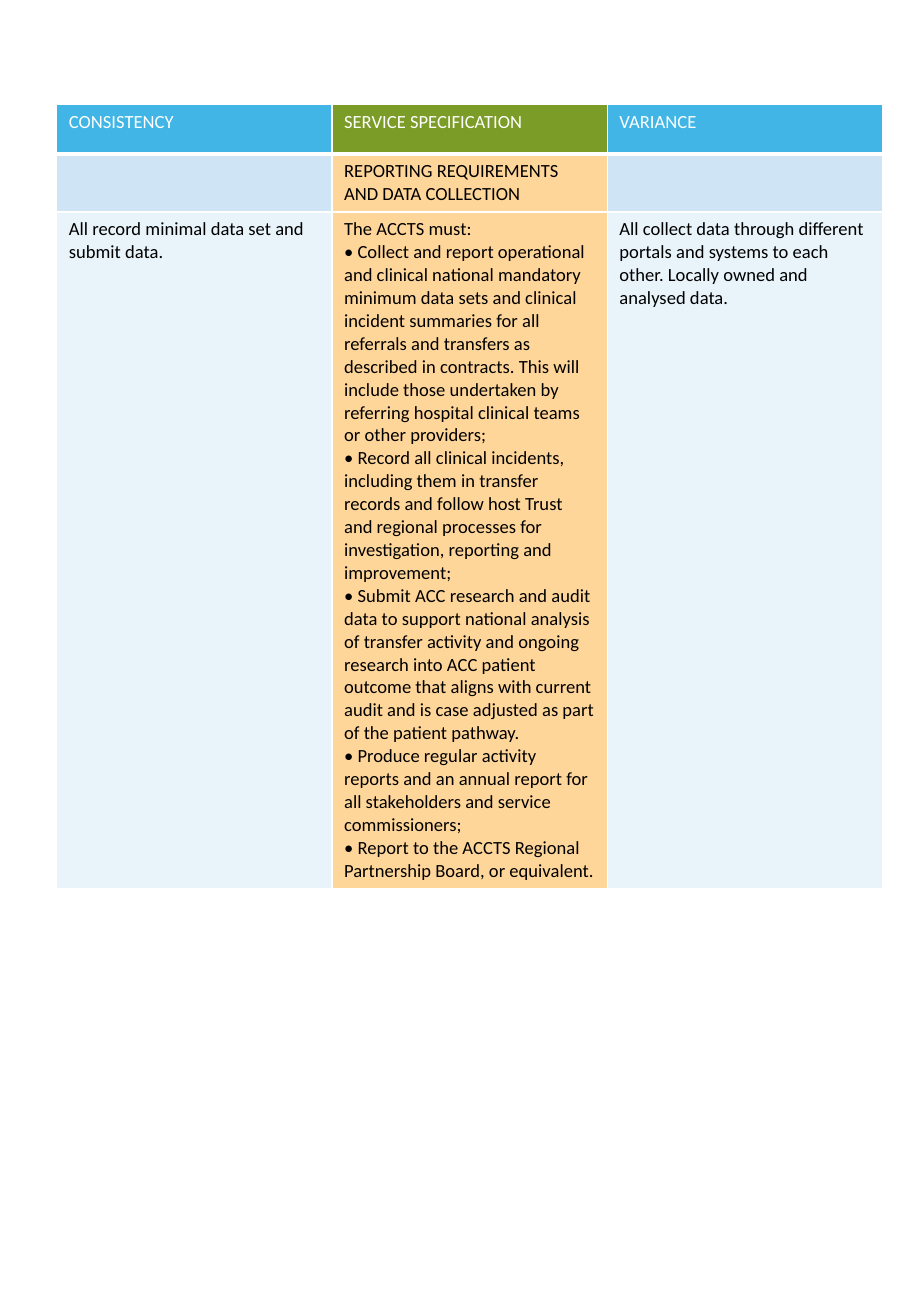
from lxml.etree import SubElement
from pptx import Presentation
from pptx.dml.color import RGBColor
from pptx.oxml.ns import qn
from pptx.util import Pt

EMU_PER_PX = 7620
WHITE, BLACK = "FFFFFF", "000000"
BLUE, GREEN, ORANGE = "41B6E6", "7B9C27", "FFD699"
MID_BLUE, PALE_BLUE = "CFE5F5", "E9F3FA"

HEADINGS = [["CONSISTENCY"], ["SERVICE SPECIFICATION"], ["VARIANCE"]]
SECTION = [[], ["REPORTING REQUIREMENTS AND DATA COLLECTION"], []]
FINDINGS = [
    ["All record minimal data set and submit data."],
    [
        "The ACCTS must:",
        "• Collect and report operational and clinical national mandatory minimum data sets and clinical incident summaries for all referrals and transfers as described in contracts. This will include those undertaken by referring hospital clinical teams or other providers;",
        "• Record all clinical incidents, including them in transfer records and follow host Trust and regional processes for investigation, reporting and improvement;",
        "• Submit ACC research and audit data to support national analysis of transfer activity and ongoing research into ACC patient outcome that aligns with current audit and is case adjusted as part of the patient pathway.",
        "• Produce regular activity reports and an annual report for all stakeholders and service commissioners;",
        "• Report to the ACCTS Regional Partnership Board, or equivalent.",
    ],
    ["All collect data through different portals and systems to each other. Locally owned and analysed data."],
]
ROWS = [
    (49, HEADINGS, (BLUE, GREEN, BLUE), WHITE),
    (57, SECTION, (MID_BLUE, ORANGE, MID_BLUE), BLACK),
    (667, FINDINGS, (PALE_BLUE, ORANGE, PALE_BLUE), BLACK),
]


def px(length):
    return length * EMU_PER_PX


def color(hex_string):
    return RGBColor.from_string(hex_string)


def fill_cell(cell, lines, fill, text_color):
    cell.fill.solid()
    cell.fill.fore_color.rgb = color(fill)
    frame = cell.text_frame
    for index, line in enumerate(lines):
        paragraph = frame.add_paragraph() if index else frame.paragraphs[0]
        run = paragraph.add_run()
        run.text = line
        run.font.name = "Calibri"
        run.font.size = Pt(11)
        run.font.bold = False
        run.font.color.rgb = color(text_color)


def border_heading(cell):
    properties = cell._tc.get_or_add_tcPr()
    for index, (side, points) in enumerate([("L", 1), ("R", 1), ("T", 1), ("B", 3)]):
        line = SubElement(properties, qn(f"a:ln{side}"), w=str(Pt(points)))
        solid = SubElement(line, qn("a:solidFill"))
        SubElement(solid, qn("a:srgbClr"), val=WHITE)
        properties.insert(index, line)


def add_comparison_table(slide, left, top, width):
    height = sum(row[0] for row in ROWS)
    table = slide.shapes.add_table(
        len(ROWS), len(HEADINGS), px(left), px(top), px(width), px(height)
    ).table
    for row_index, (row_height, texts, fills, text_color) in enumerate(ROWS):
        table.rows[row_index].height = px(row_height)
        for column_index, (lines, fill) in enumerate(zip(texts, fills)):
            cell = table.cell(row_index, column_index)
            fill_cell(cell, lines, fill, text_color)
            if row_index == 0:
                border_heading(cell)


def main():
    presentation = Presentation()
    presentation.slide_width = px(900)
    presentation.slide_height = px(1300)
    slide = presentation.slides.add_slide(presentation.slide_layouts[6])
    add_comparison_table(slide, 56, 103, 816)
    presentation.save("out.pptx")


if __name__ == "__main__":
    main()
